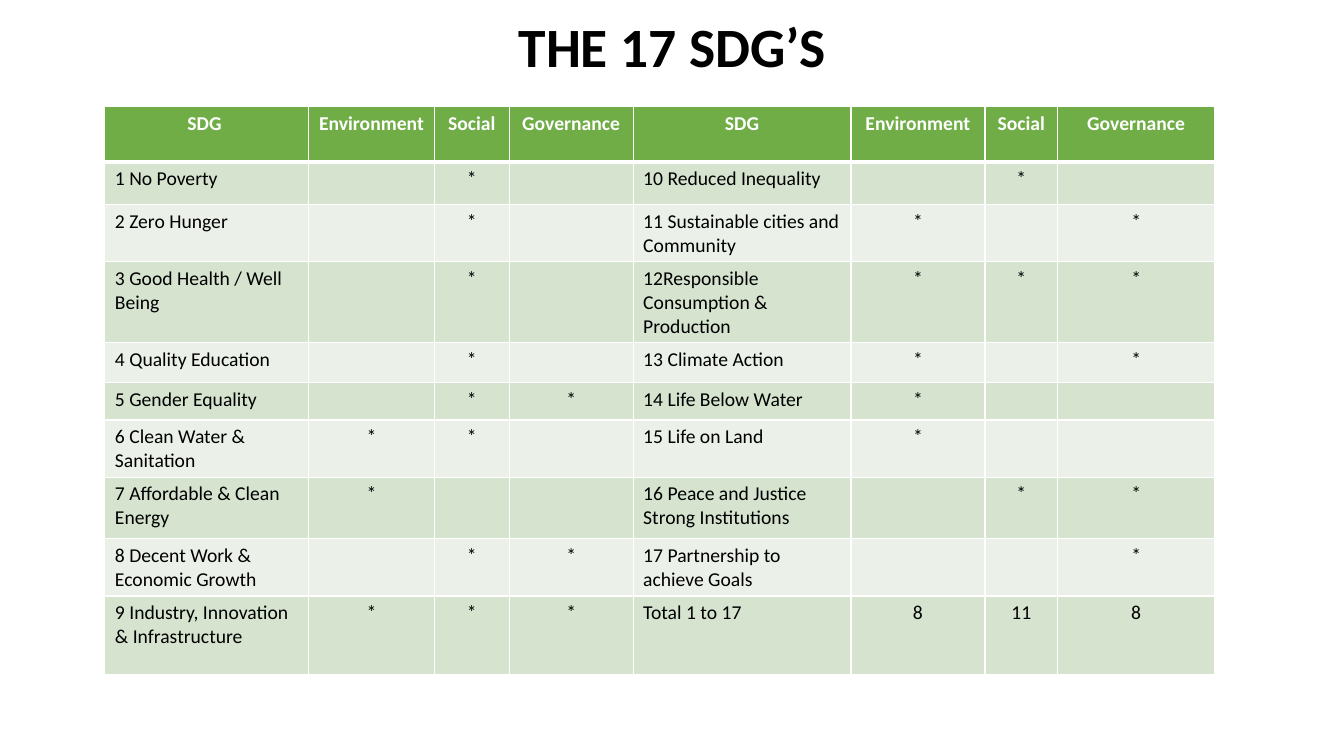
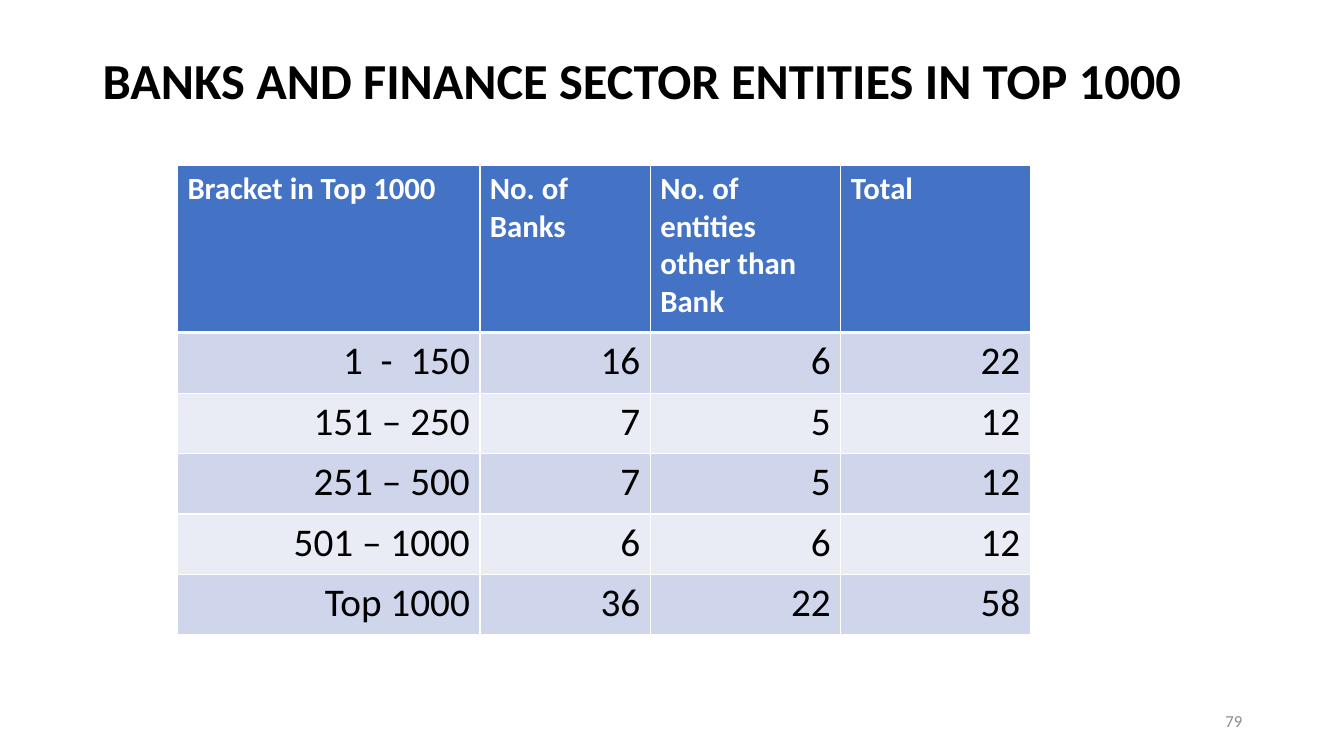
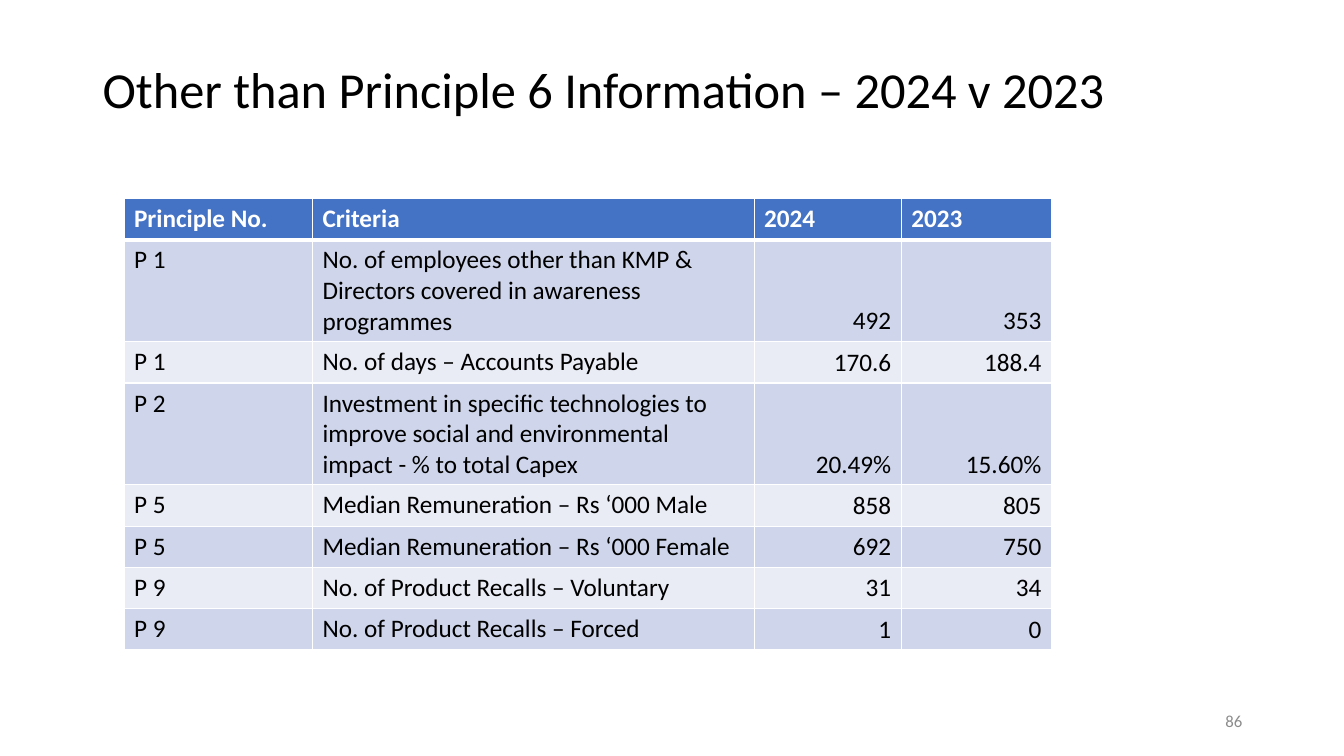
from lxml.etree import SubElement
from pptx import Presentation
from pptx.dml.color import RGBColor
from pptx.enum.text import MSO_ANCHOR, PP_ALIGN
from pptx.oxml.ns import qn
from pptx.util import Inches, Pt

FONT = "Calibri"
BLACK, WHITE, GREY = "000000", "FFFFFF", "8C8C8C"
GREEN = {"header": "70AD47", "bands": ("D5E3CF", "EBF1E9")}
BLUE = {"header": "4472C4", "bands": ("CFD5EA", "E9EBF5")}
ALIGN = {"l": PP_ALIGN.LEFT, "c": PP_ALIGN.CENTER, "r": PP_ALIGN.RIGHT}
TITLE_LEFT, TITLE_WIDTH = 0.92, 11.5
THIN, THICK = 1, 3

SDG_HEADER = ["SDG ", "Environment", "Social", "Governance",
              "SDG", "Environment", "Social", "Governance"]
SDG_ROWS = [
    ["1 No Poverty", "", "*", "", "10 Reduced Inequality", "", "*", ""],
    ["2 Zero Hunger", "", "*", "", "11 Sustainable cities and Community", "*", "", "*"],
    ["3 Good Health / Well Being", "", "*", "",
     "12Responsible Consumption & Production", "*", "*", "*"],
    ["4 Quality Education", "", "*", "", "13 Climate Action", "*", "", "*"],
    ["5 Gender Equality", "", "*", "*", "14 Life Below Water", "*", "", ""],
    ["6 Clean Water & Sanitation", "*", "*", "", "15 Life on Land", "*", "", ""],
    ["7 Affordable & Clean Energy", "*", "", "",
     "16 Peace and Justice Strong Institutions", "", "*", "*"],
    ["8 Decent Work & Economic Growth", "", "*", "*",
     "17 Partnership to achieve Goals", "", "", "*"],
    ["9 Industry, Innovation & Infrastructure", "*", "*", "*",
     "Total 1 to 17", "8", "11", "8"],
]

BANK_HEADER = ["Bracket in Top 1000", "No. of Banks",
               "No. of entities other than Bank", "Total"]
BANK_ROWS = [
    ["1  -  150", "16", "6", "22"],
    ["151 – 250", "7", "5", "12"],
    ["251 – 500", "7", "5", "12"],
    ["501 – 1000", "6", "6", "12"],
    ["Top 1000", "36", "22", "58"],
]

PRINCIPLE_HEADER = ["Principle No.", "Criteria", "2024", "2023"]
PRINCIPLE_ROWS = [
    ["P 1", "No. of employees other than KMP & Directors covered in awareness programmes",
     "492", "353"],
    ["P 1", "No. of days – Accounts Payable", "170.6", "188.4"],
    ["P 2", "Investment in specific technologies to improve social and environmental "
            "impact - % to total Capex", "20.49%", "15.60%"],
    ["P 5", "Median Remuneration – Rs ‘000 Male", "858", "805"],
    ["P 5", "Median Remuneration – Rs ‘000 Female", "692", "750"],
    ["P 9", "No. of Product Recalls – Voluntary", "31", "34"],
    ["P 9", "No. of Product Recalls – Forced", "1", "0"],
]


def color(hex_value):
    return RGBColor.from_string(hex_value)


def apply_format(target, values):
    for attribute, value in values.items():
        setattr(target, attribute, value)


def write(paragraph, text, size, ink, bold=False, align="l"):
    paragraph.alignment = ALIGN[align]
    if not text:
        SubElement(paragraph._p, qn("a:endParaRPr"), sz=str(size * 100))
        return
    run = paragraph.add_run()
    run.text = text
    apply_format(run.font, {"name": FONT, "size": Pt(size), "bold": bold})
    run.font.color.rgb = color(ink)


def add_text(slide, text, box, size, ink, bold=False, align="l", spacing=1.0):
    frame = slide.shapes.add_textbox(*map(Inches, box)).text_frame
    apply_format(frame, {"word_wrap": True, "vertical_anchor": MSO_ANCHOR.MIDDLE})
    frame.paragraphs[0].line_spacing = spacing
    write(frame.paragraphs[0], text, size, ink, bold, align)


def add_title(slide, text, top, height, size=36, bold=True, align="l"):
    box = (TITLE_LEFT, top, TITLE_WIDTH, height)
    add_text(slide, text, box, size, BLACK, bold, align, spacing=0.9)


def add_page_number(slide, number):
    add_text(slide, number, (9.42, 6.95, 3, 0.4), 12, GREY, align="r")


def add_borders(cell, top, bottom):
    properties = cell._tc.get_or_add_tcPr()
    for side, width in {"L": THIN, "R": THIN, "T": top, "B": bottom}.items():
        line = SubElement(properties, qn(f"a:ln{side}"), w=str(Pt(width)))
        SubElement(SubElement(line, qn("a:solidFill")), qn("a:srgbClr"), val=WHITE)


def style_cell(cell, fill, top=THIN, bottom=THIN, anchor=MSO_ANCHOR.TOP):
    add_borders(cell, top, bottom)
    cell.fill.solid()
    cell.fill.fore_color.rgb = color(fill)
    cell.vertical_anchor = anchor


def add_grid(slide, corner, widths, heights, header, rows, palette,
             header_size, body_size, body_align, header_align="l", bottom_columns=()):
    box = (*corner, sum(widths), sum(heights))
    table = slide.shapes.add_table(
        len(heights), len(widths), *map(Inches, box)).table
    table.horz_banding = False
    for column, width in zip(table.columns, widths):
        column.width = Inches(width)
    for row, height in zip(table.rows, heights):
        row.height = Inches(height)

    for column, label in enumerate(header):
        cell = table.cell(0, column)
        style_cell(cell, palette["header"], bottom=THICK)
        write(cell.text_frame.paragraphs[0], label, header_size, WHITE, True, header_align)

    for index, values in enumerate(rows):
        for column, value in enumerate(values):
            cell = table.cell(index + 1, column)
            style_cell(cell, palette["bands"][index % 2],
                       top=THIN if index else THICK,
                       anchor=MSO_ANCHOR.BOTTOM if column in bottom_columns
                       else MSO_ANCHOR.TOP)
            write(cell.text_frame.paragraphs[0], value, body_size, BLACK,
                  align=body_align[column])


def build_sdgs(slide):
    add_title(slide, "THE 17 SDG’S", 0.22, 0.54, size=39.6, align="c")
    add_grid(slide, (1.04, 1.06),
             [2.02, 1.25, 0.74, 1.23, 2.16, 1.33, 0.72, 1.56],
             [0.55, 0.42, 0.56, 0.78, 0.4, 0.37, 0.55, 0.61, 0.55, 0.78],
             SDG_HEADER, SDG_ROWS, GREEN, 14, 14, "lccclccc", header_align="c")


def build_banks(slide):
    add_title(slide, "BANKS AND FINANCE SECTOR ENTITIES IN TOP 1000", 0.4, 0.85)
    add_grid(slide, (1.76, 1.64), [3, 1.69, 1.89, 1.88],
             [1.66] + [0.6] * len(BANK_ROWS),
             BANK_HEADER, BANK_ROWS, BLUE, 22, 28, "rrrr")
    add_page_number(slide, "79")


def build_principles(slide):
    add_title(slide, "Other than Principle 6 Information – 2024 v 2023", 0.4, 1.03,
              bold=False)
    add_grid(slide, (1.23, 1.97), [1.87, 4.38, 1.46, 1.49],
             [0.41, 1.01, 0.41, 1.01] + [0.41] * 4,
             PRINCIPLE_HEADER, PRINCIPLE_ROWS, BLUE, 18, 18, "llrr",
             bottom_columns=(2, 3))
    add_page_number(slide, "86")


def main():
    deck = Presentation()
    apply_format(deck, {"slide_width": Inches(13.33), "slide_height": Inches(7.5)})
    for build in (build_sdgs, build_banks, build_principles):
        build(deck.slides.add_slide(deck.slide_layouts[6]))
    deck.save("out.pptx")


if __name__ == "__main__":
    main()
